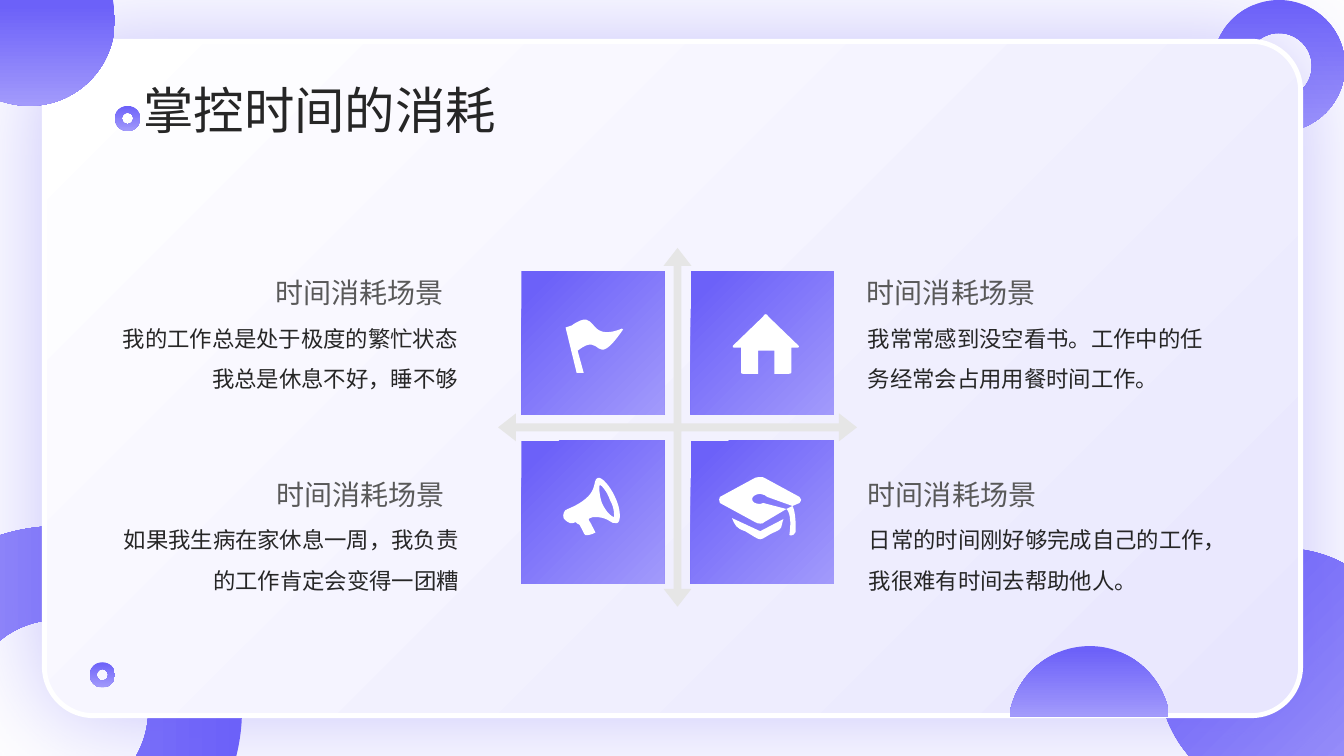
from itertools import product
from lxml.etree import SubElement
from pptx import Presentation
from pptx.dml.color import RGBColor
from pptx.enum.shapes import MSO_SHAPE
from pptx.enum.text import MSO_ANCHOR, PP_ALIGN
from pptx.oxml.ns import qn
from pptx.util import Inches, Pt

COLORS = {"violet": "6C61F9", "lilac": "A29AFB", "mist": "E8E6FE", "white": "FFFFFF",
          "axis": "E6E6E6", "title": "262626", "heading": "595959"}
CJK_FONT = "Noto Sans CJK SC"

prs = Presentation()
prs.slide_width, prs.slide_height = Inches(13.33), Inches(7.5)
slide = prs.slides.add_slide(prs.slide_layouts[5])
shapes = slide.shapes


def paint(shape, colors, angle=90, start=0):
    shape.shadow.inherit = False
    shape.line.fill.background()
    if len(colors) == 1:
        shape.fill.solid()
        shape.fill.fore_color.rgb = RGBColor.from_string(COLORS[colors[0]])
        return
    shape.fill.gradient()
    shape.fill.gradient_angle = (360 - angle) % 360
    for stop, color, position in zip(shape.fill.gradient_stops, colors, (start, 1)):
        stop.color.rgb = RGBColor.from_string(COLORS[color])
        stop.position = position


def draw_outline(contours, colors):
    builder = None
    for contour in contours:
        corners = [(Inches(x), Inches(y)) for step in contour
                   for x, y in zip(step[::2], step[1::2])]
        if builder is None:
            builder = shapes.build_freeform(*corners[0])
        else:
            builder.move_to(*corners[0])
        builder.add_line_segments(corners[1:], close=True)
    outline = builder.convert_to_shape()
    path = next(outline.element.iter(qn("a:path")))
    segments = iter(list(path.iter(qn("a:lnTo"))))
    for contour in contours:
        for step in contour[1:]:
            parts = [next(segments) for _ in range(len(step) // 2)]
            if len(parts) == 3:
                curve = SubElement(path, qn("a:cubicBezTo"))
                parts[0].addprevious(curve)
                for part in parts:
                    curve.append(part[0])
                    path.remove(part)
    paint(outline, colors, start=0.05)


ACCENT = ("violet", "lilac")
card_left, card_top, card_width, card_height = 0.44, 0.41, 12.46, 6.69
decorations = [
    (MSO_SHAPE.DONUT, -1.26, 5.22, 3.66, 3.66, [0.254], ACCENT, 180),
    (MSO_SHAPE.OVAL, 11.49, 5.44, 2.49, 2.49, [], ACCENT, 45),
    (MSO_SHAPE.DONUT, 12.03, 0, 1.31, 1.31, [0.25], ACCENT, 90),
    (MSO_SHAPE.ROUNDED_RECTANGLE, card_left, card_top, card_width, card_height,
     [0.073], ("mist", "white"), 225),
    (MSO_SHAPE.DONUT, 1.14, 1.05, 0.25, 0.25, [0.27], ACCENT, 90),
    (MSO_SHAPE.DONUT, 0.89, 6.57, 0.25, 0.25, [0.27], ACCENT, 90),
    (MSO_SHAPE.QUAD_ARROW, 4.94, 2.46, 3.56, 3.56, [0.022, 0.039, 0.05], ("axis",), 0),
]
for kind, left, top, width, height, adjustments, colors, angle in decorations:
    piece = shapes.add_shape(kind, Inches(left), Inches(top), Inches(width), Inches(height))
    for index, value in enumerate(adjustments):
        piece.adjustments[index] = value
    paint(piece, colors, angle)
    if kind == MSO_SHAPE.ROUNDED_RECTANGLE:
        piece.line.color.rgb = RGBColor.from_string(COLORS["white"])
        piece.line.width = Pt(3.5)
        effects = piece.element.spPr.find(qn("a:effectLst"))
        glow = SubElement(effects, qn("a:outerShdw"), blurRad=str(Pt(78)), dist="0",
                          algn="ctr", rotWithShape="0")
        glow_color = SubElement(glow, qn("a:srgbClr"), val=COLORS["violet"])
        SubElement(glow_color, qn("a:alpha"), val="40000")

corner_disc = [[(0, 0), (0, 1), (0.09, 1.03, 0.19, 1.05, 0.29, 1.05),
                (0.76, 1.05, 1.14, 0.67, 1.14, 0.2), (1.14, 0.13, 1.13, 0.06, 1.12, 0)]]
bottom_dome = [[(10.81, 6.41), (10.42, 6.41, 10.1, 6.68, 10.02, 7.05), (10.02, 7.11),
                (11.59, 7.11), (11.59, 7.05), (11.51, 6.68, 11.19, 6.41, 10.81, 6.41)]]
for contours in (corner_disc, bottom_dome):
    draw_outline(contours, ACCENT)

tile_size, tile_step = 1.42, 1.68
for row, column in product(range(2), range(2)):
    tile = shapes.add_shape(MSO_SHAPE.RECTANGLE, Inches(5.17 + column * tile_step),
                            Inches(2.69 + row * tile_step), Inches(tile_size), Inches(tile_size))
    paint(tile, ACCENT, 45, 0.1)

flag = [[(6.17, 3.26), (5.8, 3.41, 5.95, 3.03, 5.67, 3.23), (5.61, 3.25), (5.72, 3.7),
         (5.79, 3.7), (5.73, 3.48), (5.99, 3.27, 5.88, 3.7, 6.18, 3.27)]]
house = [[(7.92, 3.43), (7.62, 3.14), (7.61, 3.11, 7.58, 3.11, 7.57, 3.14), (7.27, 3.43),
          (7.26, 3.44, 7.27, 3.45, 7.28, 3.45), (7.35, 3.45), (7.35, 3.69),
          (7.35, 3.7, 7.35, 3.71, 7.37, 3.71), (7.52, 3.71), (7.52, 3.48), (7.68, 3.48),
          (7.68, 3.71), (7.82, 3.71), (7.85, 3.71, 7.85, 3.7, 7.85, 3.69), (7.85, 3.45),
          (7.91, 3.45), (7.92, 3.45, 7.94, 3.44, 7.92, 3.43)]]
megaphone = [
    [(6.1, 4.93), (6.05, 4.82, 5.97, 4.73, 5.93, 4.74), (5.86, 4.77, 5.97, 4.91, 5.63, 5.05),
     (5.59, 5.06, 5.58, 5.11, 5.59, 5.14), (5.6, 5.16, 5.65, 5.2, 5.68, 5.19), (5.71, 5.18),
     (5.73, 5.21, 5.75, 5.19, 5.75, 5.21), (5.76, 5.23, 5.79, 5.28, 5.79, 5.29),
     (5.8, 5.3, 5.81, 5.32, 5.82, 5.31), (5.83, 5.31, 5.88, 5.3, 5.89, 5.29),
     (5.91, 5.29, 5.91, 5.28, 5.9, 5.27), (5.9, 5.26, 5.88, 5.24, 5.88, 5.23),
     (5.87, 5.22, 5.86, 5.18, 5.84, 5.16), (5.83, 5.15, 5.86, 5.13, 5.88, 5.13),
     (6.04, 5.12, 6.06, 5.21, 6.12, 5.19), (6.16, 5.18, 6.16, 5.05, 6.1, 4.93)],
    [(6.09, 5.13), (6.07, 5.13, 6.01, 5.08, 5.97, 4.99), (5.94, 4.9, 5.94, 4.81, 5.95, 4.81),
     (5.96, 4.81, 6.02, 4.87, 6.05, 4.96), (6.1, 5.05, 6.09, 5.12, 6.09, 5.13)]]
graduation_cap = [
    [(7.26, 5.14), (7.29, 5.21, 7.3, 5.24, 7.39, 5.27), (7.46, 5.31, 7.51, 5.35, 7.54, 5.35),
     (7.57, 5.35, 7.61, 5.31, 7.68, 5.28), (7.77, 5.24, 7.74, 5.24, 7.77, 5.15), (7.54, 5.27)],
    [(7.93, 4.93), (7.58, 4.74), (7.57, 4.73, 7.52, 4.73, 7.49, 4.74), (7.14, 4.93),
     (7.13, 4.95, 7.13, 4.96, 7.14, 4.99), (7.49, 5.18), (7.52, 5.2, 7.57, 5.2, 7.58, 5.18),
     (7.8, 5.05), (7.57, 4.99), (7.55, 4.99, 7.55, 5, 7.54, 5),
     (7.49, 5, 7.46, 4.98, 7.46, 4.95), (7.46, 4.93, 7.49, 4.9, 7.54, 4.9),
     (7.57, 4.9, 7.6, 4.92, 7.61, 4.93), (7.86, 5.02), (7.93, 4.99),
     (7.95, 4.96, 7.95, 4.95, 7.93, 4.93)],
    [(7.83, 5.3), (7.81, 5.31, 7.87, 5.33, 7.89, 5.28), (7.9, 5.08, 7.86, 5.02, 7.86, 5.02),
     (7.8, 5.05), (7.8, 5.05, 7.86, 5.09, 7.83, 5.3)]]
for icon in (flag, house, megaphone, graduation_cap):
    draw_outline(icon, ("white",))

title = shapes.title
shapes.element.append(title.element)
title.left, title.top, title.width, title.height = (Inches(v) for v in (1.32, 0.73, 3.9, 0.71))
title.text_frame.text = "掌控时间的消耗"
title.text_frame.word_wrap = True
title.text_frame.vertical_anchor = MSO_ANCHOR.MIDDLE
title_line = title.text_frame.paragraphs[0]
title_line.alignment = PP_ALIGN.LEFT
title_font = title_line.runs[0].font
title_font.name, title_font.size = CJK_FONT, Pt(36)
title_font.color.rgb = RGBColor.from_string(COLORS["title"])
SubElement(title_font._element, qn("a:ea"), typeface=CJK_FONT)

scenes = [["我的工作总是处于极度的繁忙状态我总是休息不好，睡不够",
           "我常常感到没空看书。工作中的任务经常会占用用餐时间工作。"],
          ["如果我生病在家休息一周，我负责的工作肯定会变得一团糟",
           "日常的时间刚好够完成自己的工作，我很难有时间去帮助他人。"]]
scene_columns = [(0.99, 2.6, PP_ALIGN.RIGHT), (8.51, 8.5, PP_ALIGN.LEFT)]
for row, column in product(range(2), range(2)):
    body_left, heading_left, alignment = scene_columns[column]
    top = 2.62 + 2 * row
    nudge = 0.01 * row
    for text, left, y, width, height, size, spacing, color in (
            (scenes[row][column], body_left, top + 0.42, 3.65, 0.73, 16, 1.5, "title"),
            ("时间消耗场景", heading_left, top, 1.9, 0.58, 20, 1.2, "heading")):
        box = shapes.add_textbox(Inches(left + nudge), Inches(y), Inches(width), Inches(height))
        box.text_frame.word_wrap = True
        box.text_frame.text = text
        line = box.text_frame.paragraphs[0]
        line.alignment, line.line_spacing, line.space_before = alignment, spacing, Pt(10)
        font = line.runs[0].font
        font.name, font.size = "Arial", Pt(size)
        font.color.rgb = RGBColor.from_string(COLORS[color])
        SubElement(font._element, qn("a:ea"), typeface=CJK_FONT)

prs.save("out.pptx")
